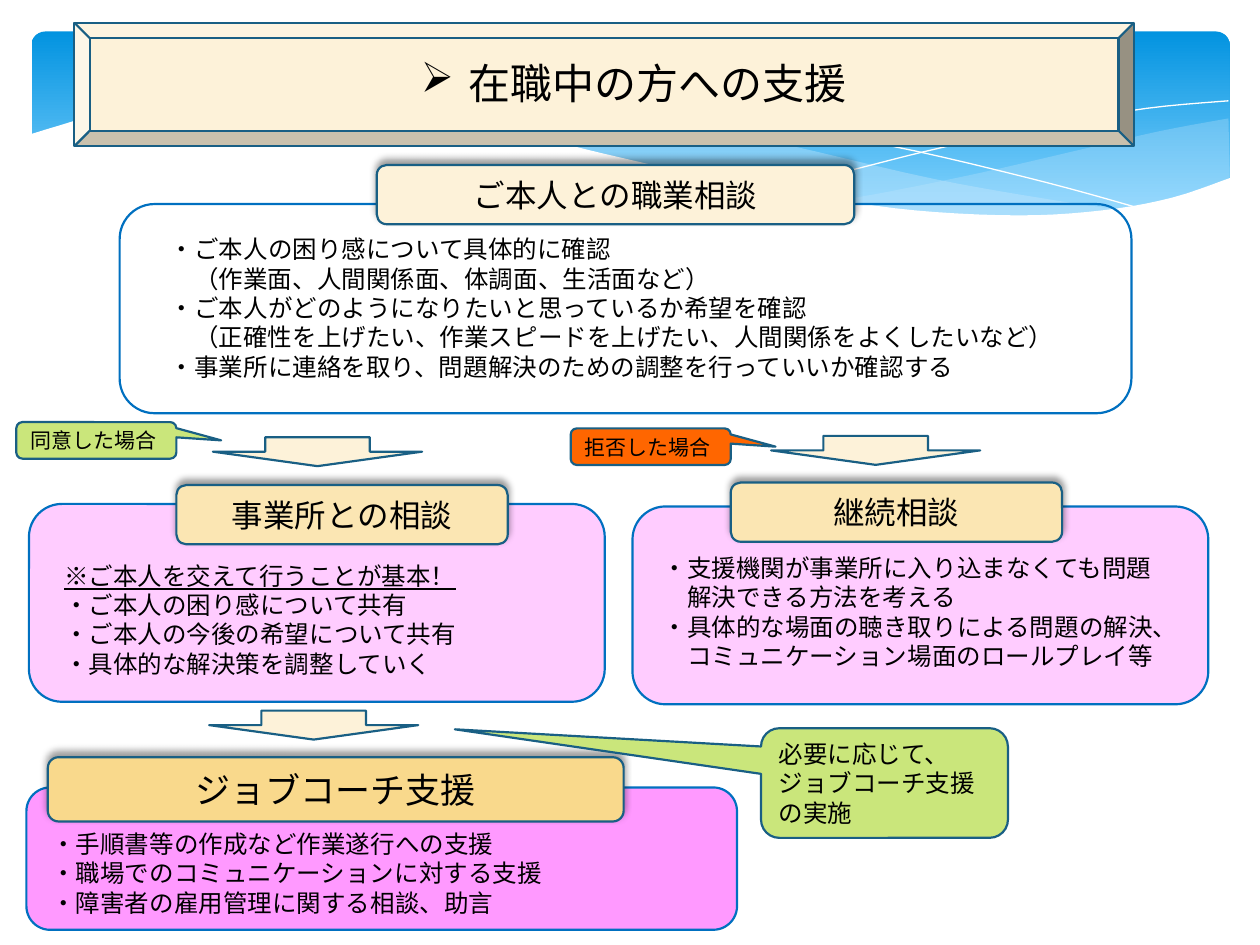
from dataclasses import dataclass

from lxml.etree import SubElement as Sub
from pptx import Presentation
from pptx.dml.color import RGBColor as RGB
from pptx.enum.shapes import MSO_SHAPE as Kind
from pptx.enum.text import MSO_ANCHOR as Anchor, PP_ALIGN as Align
from pptx.oxml.ns import qn
from pptx.util import Inches, Pt

UNIT = Inches(0.1)  # grid of 100 columns by 75 rows


@dataclass(frozen=True)
class Theme:
    font: str = "Noto Sans CJK JP"
    ink: str = "000000"
    white: str = "FFFFFF"
    sky: tuple = ("0293E0", "83D3FE")
    mist: str = "C6E7FC"
    blue: str = "0070C0"
    edge: str = "195F84"
    cream: str = "FDF2D9"
    sand: str = "FBE6B3"
    gold: str = "F9D98C"
    pink: str = "FFCCFF"
    rose: str = "FF99FF"
    green: str = "CAE67B"
    red: str = "FF6600"
    title: int = 24
    large: int = 20
    head: int = 18
    body: int = 14
    note: int = 12
    line: float = 1.25


T = Theme()


# Basic parts
def grid(*vals):
    return [round(v * UNIT) for v in vals]


def within(box, part):
    return box[0] + part[0], box[1] + part[1], part[2], part[3]


def paint(shape, fill=None, line=None, width=T.line):
    shape.shadow.inherit = False
    if fill:
        shape.fill.solid()
        shape.fill.fore_color.rgb = RGB.from_string(fill)
    else:
        shape.fill.background()
    if line:
        shape.line.color.rgb = RGB.from_string(line)
        shape.line.width = Pt(width)
    else:
        shape.line.fill.background()
    return shape


def block(slide, kind, box, fill=None, line=T.edge):
    return paint(slide.shapes.add_shape(kind, *grid(*box)), fill, line)


def write(shape, lines, size, align=Align.LEFT, anchor=Anchor.MIDDLE):
    """A line starting with > is indented by one letter, with _ underlined."""
    frame = shape.text_frame
    frame.word_wrap = True
    frame.vertical_anchor = anchor
    for i, line in enumerate(lines):
        para = frame.paragraphs[0] if i == 0 else frame.add_paragraph()
        para.text = line.lstrip(">_")
        para.alignment = align
        if line.startswith(">"):
            para._p.get_or_add_pPr().set("marL", str(Pt(size)))
        font = para.font
        font.name, font.size = T.font, Pt(size)
        font.color.rgb = RGB.from_string(T.ink)
        if line.startswith("_"):
            font.underline = True
        Sub(para._p.pPr.find(qn("a:defRPr")), qn("a:ea"), typeface=T.font)


def prose(slide, box, lines, size, align=Align.LEFT):
    text = slide.shapes.add_textbox(*grid(*box))
    write(text, lines, size, align, Anchor.TOP)
    return text


def glow(shape):
    effects = shape._element.spPr.find(qn("a:effectLst"))
    outer = Sub(effects, qn("a:outerShdw"), blurRad=str(Pt(4)), dist=str(Pt(3)),
                dir=str(270 * 60000), rotWithShape="0")
    color = Sub(outer, qn("a:srgbClr"), val=T.ink)
    Sub(color, qn("a:alpha"), val="40000")


# Smooth outlines through a few points
def bend(points, steps=5):
    ends = [points[0], *points, points[-1]]
    out = [points[0]]
    for a, b, c, d in zip(ends, ends[1:], ends[2:], ends[3:]):
        for n in range(1, steps + 1):
            t = n / steps
            out.append(tuple(
                (2 * q + (r - p) * t + (2 * p - 5 * q + 4 * r - s) * t ** 2
                 + (3 * q - p - 3 * r + s) * t ** 3) / 2
                for p, q, r, s in zip(a, b, c, d)))
    return out


def trace(slide, points, fill=None, alpha=None, line=None):
    dots = [tuple(grid(*p)) for p in points]
    pen = slide.shapes.build_freeform(*dots[0])
    pen.add_line_segments(dots[1:], close=bool(fill))
    shape = paint(pen.convert_to_shape(), fill, line, 0)
    if alpha:
        color = shape._element.spPr.find(qn("a:solidFill"))[0]
        Sub(color, qn("a:alpha"), val=str(alpha * 1000))


# Regions
def banner(slide, box):
    x, y, w, h = box
    sky = block(slide, Kind.ROUNDED_RECTANGLE, box, T.white, None)
    sky.adjustments[0] = 0.07
    sky.fill.gradient()
    sky.fill.gradient_angle = 270
    for stop, color, place in zip(sky.fill.gradient_stops, T.sky, (0, 0.9)):
        stop.color.rgb = RGB.from_string(color)
        stop.position = place

    def wave(*points):
        return bend([(x + a, y + b) for a, b in points])

    # Pale waves
    trace(slide, wave((95, 6.9), (89.6, 7.9), (83.6, 9.3), (75.4, 11.2),
                      (68.1, 12.7), (63.6, 13.5))
          + wave((63.6, 13.5), (69.4, 14.2), (75.4, 14.7), (81, 14.7),
                 (86.4, 14.1), (91, 13.1), (95.1, 11.6)), T.mist, 29)
    trace(slide, wave((86.8, 14.2), (81.2, 13.4), (71.6, 11.7), (60.4, 9.1),
                      (51.6, 7.2), (43.9, 6), (37.5, 5.5), (31.9, 5.5), (26.1, 6.1))
          + wave((26.1, 6.1), (31.7, 6.9), (37.9, 8.1), (46.6, 10.1),
                 (54.1, 11.8), (60.9, 13.1), (67, 14), (72.3, 14.5),
                 (78.2, 14.8), (82.3, 14.7), (86.8, 14.2)), T.mist, 40)
    # Thin lines
    trace(slide, wave((28.4, 6.5), (32.8, 5.8), (39.1, 5.6), (46.4, 5.9),
                      (53.1, 6.6), (61.1, 7.8), (70.2, 9.5), (80.6, 12),
                      (88.2, 14.1)), line=T.white)
    trace(slide, wave((58.8, 12.6), (64.7, 11.1), (72.3, 9.2), (81.1, 7.4),
                      (88.5, 6.1), (95, 5.5)), line=T.white)
    # White lower edge
    trace(slide, wave((95.2, 11.6), (90.5, 13.2), (85, 14.2), (78.4, 14.6),
                      (70.1, 14.2), (62.3, 13.1), (53, 11.4), (45, 9.6),
                      (39.3, 8.2), (31.5, 6.7), (24.6, 5.7), (18.6, 5.3),
                      (12.1, 5.4), (6, 6.4), (2.1, 7.5), (-0.2, 8.2))
          + [(x - 0.2, y + 19.9), (x + 95.2, y + 19.9)], T.white)


def title(slide, box, text):
    block(slide, Kind.BEVEL, box, T.cream)
    label = prose(slide, within(box, (1.2, 2.3, 86.4, 5)), [text], T.title, Align.CENTER)
    props = label.text_frame.paragraphs[0]._p.pPr
    props.set("marL", str(Inches(0.38)))
    props.set("indent", str(-Inches(0.38)))
    mark = Sub(props, qn("a:buChar"), char="➢")
    props.find(qn("a:defRPr")).addprevious(mark)


def panel(slide, box, fill, tag, name, color, size, area, lines):
    block(slide, Kind.ROUNDED_RECTANGLE, box, fill, T.blue)
    label = block(slide, Kind.ROUNDED_RECTANGLE, within(box, tag), color)
    glow(label)
    write(label, [name], size, Align.CENTER)
    prose(slide, within(box, area), lines, T.body)


def arrow(slide, x, y):
    block(slide, Kind.DOWN_ARROW, (x, y, 16.6, 2.3), T.cream)


def callout(slide, box, fill, tip, lines, size):
    shape = block(slide, Kind.ROUNDED_RECTANGULAR_CALLOUT, box, fill)
    shape.adjustments[0], shape.adjustments[1] = tip
    write(shape, lines, size)


def main():
    deck = Presentation()
    deck.slide_width, deck.slide_height = grid(100, 75)
    slide = deck.slides.add_slide(deck.slide_layouts[6])

    banner(slide, (2.5, 2.5, 95.1, 15.6))
    title(slide, (5.9, 1.8, 84.1, 9.8), "在職中の方への支援")

    # Panels: tag and text areas are offsets from each box
    panel(slide, (9.5, 16.2, 80.3, 16.6), None, (20.4, -3.1, 37.9, 4.7),
          "ご本人との職業相談", T.cream, T.head, (3, 1.9, 75.5, 12.8),
          ["・ご本人の困り感について具体的に確認",
           ">（作業面、人間関係面、体調面、生活面など）",
           "・ご本人がどのようになりたいと思っているか希望を確認",
           ">（正確性を上げたい、作業スピードを上げたい、人間関係をよくしたいなど）",
           "・事業所に連絡を取り、問題解決のための調整を行っていいか確認する"])
    panel(slide, (2.3, 40, 45.7, 15.7), T.pink, (11.7, -1.5, 26.3, 4.7),
          "事業所との相談", T.sand, T.head, (1.8, 4, 42.8, 10.4),
          ["_※ご本人を交えて行うことが基本！",
           "・ご本人の困り感について共有",
           "・ご本人の今後の希望について共有",
           "・具体的な解決策を調整していく"])
    panel(slide, (50.2, 40.2, 45.7, 15.7), T.pink, (7.8, -1.9, 26.3, 4.7),
          "継続相談", T.sand, T.head, (1.4, 3.2, 42.8, 10.4),
          ["・支援機関が事業所に入り込まなくても問題",
           ">解決できる方法を考える",
           "・具体的な場面の聴き取りによる問題の解決、",
           ">コミュニケーション場面のロールプレイ等"])
    panel(slide, (2.1, 62.5, 56.4, 11.3), T.rose, (1.7, -2.4, 45.7, 5.1),
          "ジョブコーチ支援", T.gold, T.large, (1, 2.8, 68.6, 10.4),
          ["・手順書等の作成など作業遂行への支援",
           "・職場でのコミュニケーションに対する支援",
           "・障害者の雇用管理に関する相談、助言"])

    # Flow between panels
    for x, y in ((16.9, 34.7), (61.2, 34.6), (16.6, 56.4)):
        arrow(slide, x, y)
    side = (0.78, 0)
    callout(slide, (1.3, 33.5, 12.7, 2.9), T.green, side, ["同意した場合"], T.note)
    callout(slide, (45.3, 34, 12.7, 2.9), T.red, side, ["拒否した場合"], T.note)
    callout(slide, (60.4, 57.8, 19.6, 8.7), T.green, (-1.74, -0.49),
            ["必要に応じて、", "ジョブコーチ支援の実施"], T.body)

    deck.save("out.pptx")


if __name__ == "__main__":
    main()
